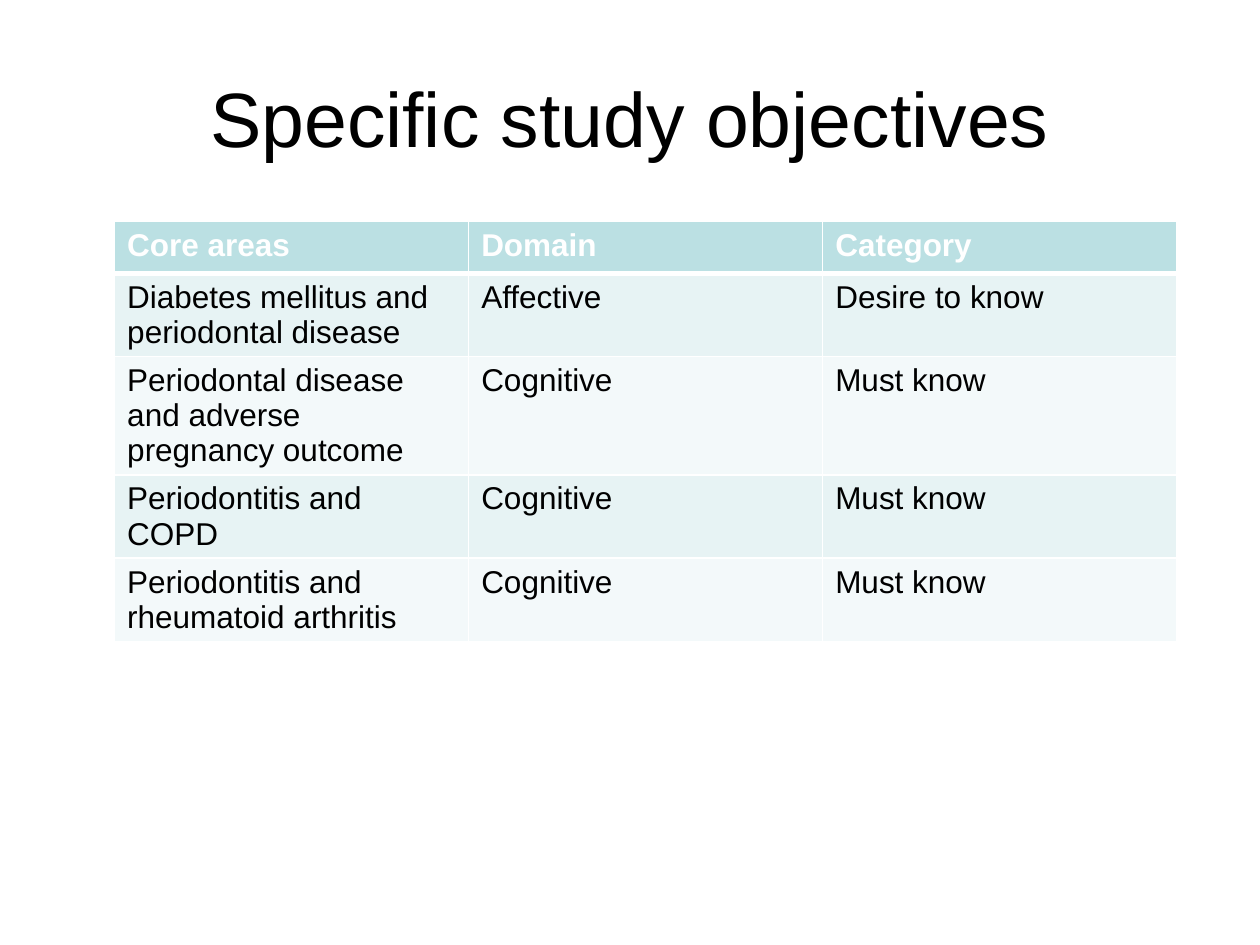
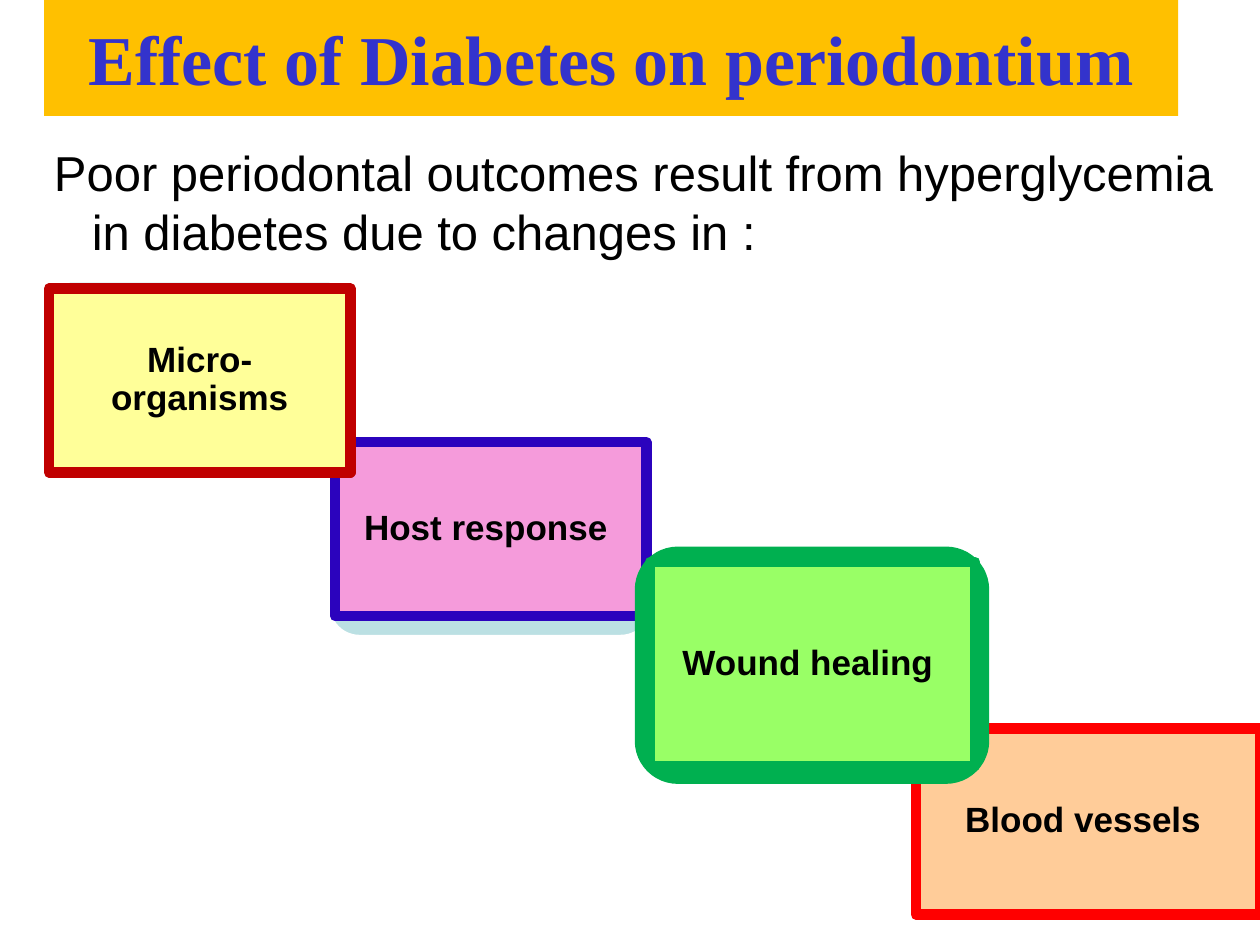
from dataclasses import dataclass

from lxml import etree
from pptx import Presentation
from pptx.dml.color import RGBColor
from pptx.enum import shapes, text
from pptx.oxml.ns import qn
from pptx.util import Inches, Pt


@dataclass(frozen=True)
class Theme:
    sans: str = "Arial"
    serif: str = "Times New Roman"
    black: str = "000000"
    white: str = "FFFFFF"
    teal: str = "BBE0E3"
    row_fills: tuple = ("E7F3F4", "F3F9FA")
    banner: str = "FFC000"
    banner_text: str = "3333CC"
    title_size: int = 44
    banner_size: int = 40
    body_size: int = 28
    box_size: int = 20
    table_size: int = 18


theme = Theme()


def set_font(p, size, color, name=theme.sans, bold=False):
    p.font.name = name
    p.font.size = Pt(size)
    p.font.bold = bold
    p.font.color.rgb = RGBColor.from_string(color)


def add_box(slide, kind, place, fill, line, width):
    sp = slide.shapes.add_shape(kind, *map(Inches, place))
    sp.shadow.inherit = False
    sp.fill.solid()
    sp.fill.fore_color.rgb = RGBColor.from_string(fill)
    sp.line.color.rgb = RGBColor.from_string(line)
    sp.line.width = Pt(width)
    etree.SubElement(sp.line._get_or_add_ln(), qn("a:round"))
    return sp


prs = Presentation()
prs.slide_width, prs.slide_height = Inches(10), Inches(7.5)
title_only = prs.slide_layouts[5]

# Titles
titles = [
    ("Specific study objectives", (0.5, 0.3, 9, 1.25),
     (theme.title_size, theme.black, theme.sans, False), None),
    ("Effect of Diabetes on periodontium", (0.35, 0, 9, 0.92),
     (theme.banner_size, theme.banner_text, theme.serif, True), theme.banner),
]
for words, place, font, fill in titles:
    title = prs.slides.add_slide(title_only).shapes.title
    title.left, title.top, title.width, title.height = map(Inches, place)
    title.text_frame.text = words
    title.text_frame.vertical_anchor = text.MSO_ANCHOR.MIDDLE
    p = title.text_frame.paragraphs[0]
    p.alignment = text.PP_ALIGN.CENTER
    set_font(p, *font)
    if fill:
        title.fill.solid()
        title.fill.fore_color.rgb = RGBColor.from_string(fill)
objectives, effects = prs.slides

# Objectives table
rows = [
    ("Core areas", "Domain", "Category"),
    ("Diabetes mellitus and periodontal disease", "Affective", "Desire to know"),
    ("Periodontal disease and adverse pregnancy outcome", "Cognitive", "Must know"),
    ("Periodontitis and COPD", "Cognitive", "Must know"),
    ("Periodontitis and rheumatoid arthritis", "Cognitive", "Must know"),
]
table = objectives.shapes.add_table(
    len(rows), 3, Inches(0.91), Inches(1.76), Inches(8.43), Inches(2.05)).table
for row in table.rows:
    row.height = Inches(0.41)
for r, row in enumerate(rows):
    header = r == 0
    for c, words in enumerate(row):
        cell = table.cell(r, c)
        cell.text = words
        set_font(cell.text_frame.paragraphs[0], theme.table_size,
                 theme.white if header else theme.black, bold=header)
        tc_pr = cell._tc.get_or_add_tcPr()
        for side in "LRTB":
            thick = (header and side == "B") or (r == 1 and side == "T")
            ln = etree.SubElement(tc_pr, qn(f"a:ln{side}"), w=str(Pt(3 if thick else 1)))
            solid = etree.SubElement(ln, qn("a:solidFill"))
            etree.SubElement(solid, qn("a:srgbClr"), val=theme.white)
        cell.fill.solid()
        cell.fill.fore_color.rgb = RGBColor.from_string(
            theme.teal if header else theme.row_fills[(r - 1) % 2])

# Introductory sentence with a hanging indent
intro = effects.shapes.add_textbox(Inches(0.25), Inches(1.08), Inches(9.58), Inches(1))
tf = intro.text_frame
tf.word_wrap = True
p = tf.paragraphs[0]
p.text = "Poor periodontal outcomes result from hyperglycemia in diabetes due to changes in :"
p.space_before = Pt(3)
set_font(p, theme.body_size, theme.black)
p_pr = p._p.get_or_add_pPr()
p_pr.set("marL", str(Inches(0.38)))
p_pr.set("indent", str(Inches(-0.3)))

# Staircase of changes: label, backing (place, fill, line, width), face (place, fill, line)
steps = [
    ("Host response ", ((2.58, 3.44, 2.62, 1.64), theme.teal, theme.white, 6),
     ((2.66, 3.51, 2.47, 1.38), "F59BDB", "2B03BD")),
    ("Blood vessels ", ((7.32, 6.08, 2.68, 1.11), "FF0000", "FF0000", 2),
     ((7.27, 5.78, 2.73, 1.48), "FFCC99", "FF0000")),
    ("Wound healing ", ((5.08, 4.38, 2.73, 1.8), "00B050", "00B050", 6),
     ((5.16, 4.46, 2.58, 1.62), "99FF66", "00B050")),
    ("Micro-organisms", ((0.34, 2.23, 2.49, 1.29), theme.teal, theme.white, 2),
     ((0.39, 2.29, 2.39, 1.46), "FFFF99", "C00000")),
]
for label, backing, face in steps:
    add_box(effects, shapes.MSO_SHAPE.ROUNDED_RECTANGLE, *backing)
    sp = add_box(effects, shapes.MSO_SHAPE.RECTANGLE, *face, 6)
    tf = sp.text_frame
    tf.word_wrap = True
    tf.vertical_anchor = text.MSO_ANCHOR.MIDDLE
    tf.margin_left = tf.margin_right = Inches(0.08)
    tf.margin_top = tf.margin_bottom = Inches(0.04)
    p = tf.paragraphs[0]
    p.text = label
    p.alignment = text.PP_ALIGN.CENTER
    p.line_spacing = 0.9
    set_font(p, theme.box_size, theme.black, bold=True)

prs.save("out.pptx")
